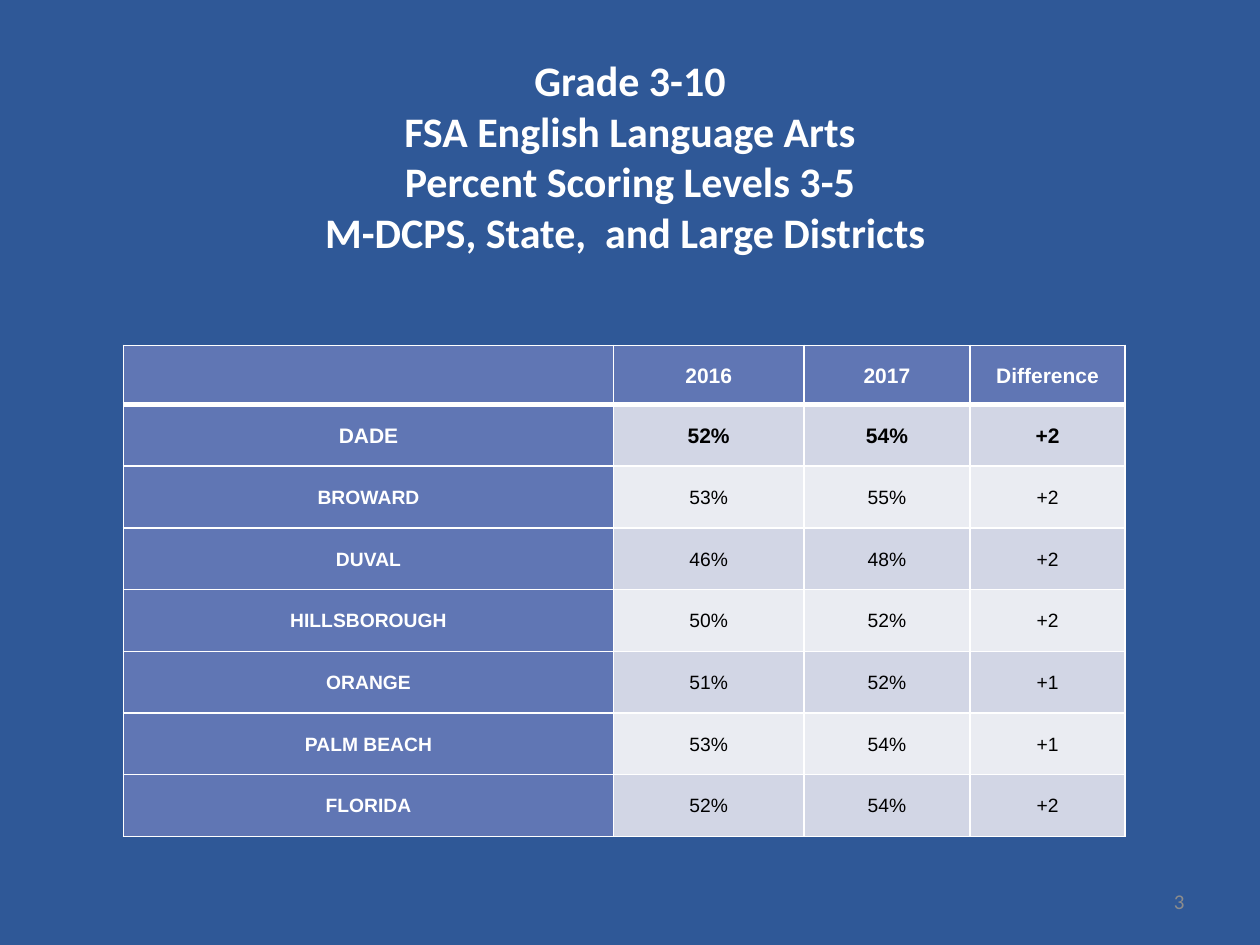
from copy import deepcopy

from lxml.etree import SubElement
from pptx import Presentation
from pptx.dml.color import RGBColor
from pptx.enum.text import MSO_ANCHOR, PP_ALIGN
from pptx.oxml.ns import qn
from pptx.util import Inches, Pt

COLORS = {
    "background": "2F5897",
    "header": "6076B4",
    "dark band": "D2D6E5",
    "light band": "EAECF2",
    "white": "FFFFFF",
    "black": "000000",
    "gray": "8C8C8C",
}
TITLE = "\v".join([
    "Grade 3-10",
    "FSA English Language Arts",
    "Percent Scoring Levels 3-5",
    "M-DCPS, State,  and Large Districts ",
])
ROWS = [
    ("", "2016", "2017", "Difference"),
    ("DADE", "52%", "54%", "+2"),
    ("BROWARD", "53%", "55%", "+2"),
    ("DUVAL", "46%", "48%", "+2"),
    ("HILLSBOROUGH", "50%", "52%", "+2"),
    ("ORANGE", "51%", "52%", "+1"),
    ("PALM BEACH", "53%", "54%", "+1"),
    ("FLORIDA", "52%", "54%", "+2"),
]
COLUMN_WIDTHS = [3.89, 1.51, 1.32, 1.23]
HEADER_HEIGHT, ROW_HEIGHT = 0.47, 0.49


def write(frame, text, size, color, font="Calibri", bold=False,
          align=PP_ALIGN.CENTER, spacing=None):
    """Put one formatted paragraph in a text frame; a vertical tab breaks the line."""
    frame.word_wrap = True
    para = frame.paragraphs[0]
    para.text = text
    para.alignment = align
    para.line_spacing = spacing
    for span in para.runs:
        span.font.name = font
        span.font.size = Pt(size)
        span.font.bold = bold
        span.font.color.rgb = RGBColor.from_string(COLORS[color])
    for line_break in para._p.findall(qn("a:br")):
        line_break.append(deepcopy(para.runs[0]._r.rPr))


def add_border(cell, side, points):
    line = SubElement(cell._tc.get_or_add_tcPr(), qn(f"a:ln{side}"), w=str(Pt(points)))
    fill = SubElement(line, qn("a:solidFill"))
    SubElement(fill, qn("a:srgbClr"), val=COLORS["white"])


deck = Presentation()
deck.slide_width, deck.slide_height = Inches(10), Inches(7.5)
page = deck.slides.add_slide(deck.slide_layouts[5])
page.background.fill.solid()
page.background.fill.fore_color.rgb = RGBColor.from_string(COLORS["background"])

title = page.shapes.title
title.left, title.top = Inches(0.5), Inches(0.3)
title.width, title.height = Inches(9), Inches(1.87)
title.text_frame.vertical_anchor = MSO_ANCHOR.MIDDLE
write(title.text_frame, TITLE, size=24, color="white", bold=True)

table_height = HEADER_HEIGHT + ROW_HEIGHT * (len(ROWS) - 1)
table = page.shapes.add_table(
    len(ROWS), len(COLUMN_WIDTHS), Inches(0.98), Inches(2.74),
    Inches(sum(COLUMN_WIDTHS)), Inches(table_height)).table
for column, width in zip(table.columns, COLUMN_WIDTHS):
    column.width = Inches(width)

for r, values in enumerate(ROWS):
    table.rows[r].height = Inches(ROW_HEIGHT if r else HEADER_HEIGHT)
    for c, value in enumerate(values):
        cell = table.cell(r, c)
        is_header = r == 0 or c == 0
        cell.vertical_anchor = MSO_ANCHOR.MIDDLE
        cell.margin_left = cell.margin_right = Inches(0.07)
        cell.margin_top = cell.margin_bottom = 0
        # The rule between the header and the first district is heavier.
        for side in "LRTB":
            add_border(cell, side, 3 if (r, side) in [(0, "B"), (1, "T")] else 1)
        band = "dark band" if r % 2 else "light band"
        cell.fill.solid()
        cell.fill.fore_color.rgb = RGBColor.from_string(
            COLORS["header" if is_header else band])
        write(cell.text_frame, value, font="Arial", size=12 if r < 2 else 11,
              color="white" if is_header else "black",
              bold=is_header or r == 1, spacing=1.07)

number_box = page.shapes.add_textbox(Inches(7.17), Inches(6.95), Inches(2.33), Inches(0.4))
number_box.text_frame.vertical_anchor = MSO_ANCHOR.MIDDLE
write(number_box.text_frame, "3", size=12, color="gray", align=PP_ALIGN.RIGHT)

deck.save("out.pptx")
